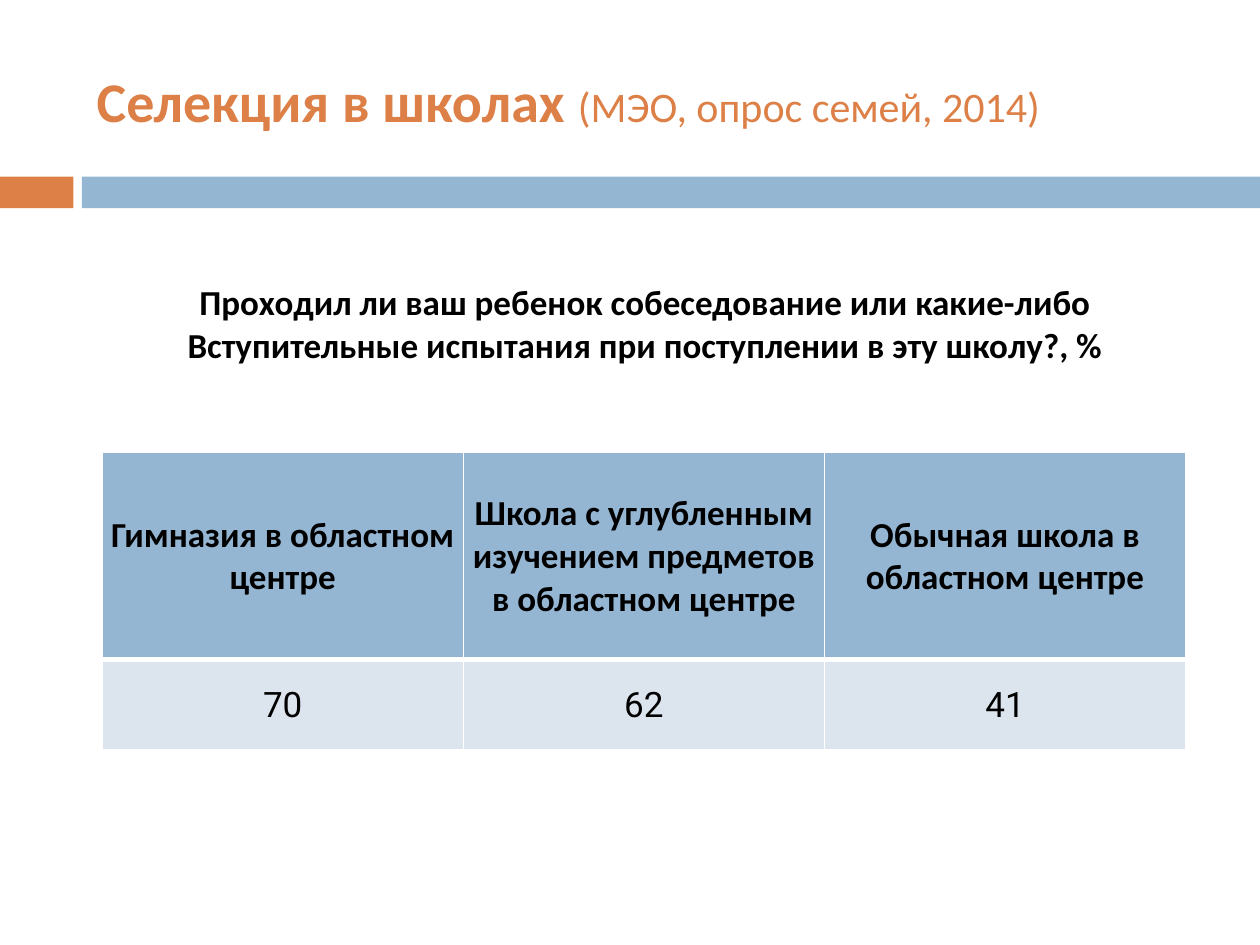
from lxml.etree import SubElement
from pptx import Presentation
from pptx.dml.color import RGBColor
from pptx.enum.shapes import MSO_SHAPE
from pptx.enum.text import MSO_ANCHOR, PP_ALIGN
from pptx.oxml.ns import qn
from pptx.util import Cm, Pt

ORANGE, BLUE, PALE, BLACK, WHITE = "DD8047", "94B6D2", "DCE5EE", "000000", "FFFFFF"
HEADING = {"name": "Calibri", "size": Pt(20), "bold": True, "color": BLACK}
VALUE = {**HEADING, "name": "Roboto", "bold": False}
TITLE = {**HEADING, "size": Pt(32), "color": ORANGE}
SUBTITLE = {**TITLE, "size": Pt(24), "bold": False}


def color(hex_value):
    return RGBColor.from_string(hex_value)


def paint(target, hex_value):
    target.fill.solid()
    target.fill.fore_color.rgb = color(hex_value)


class SlideBuilder:
    """Holds the table style and the slide being filled."""

    cell_format = {
        "vertical_anchor": MSO_ANCHOR.MIDDLE,
        "margin_left": Cm(0.03),
        "margin_right": Cm(0.03),
        "margin_top": Cm(0.03),
        "margin_bottom": Cm(0),
    }
    border_color = WHITE

    def __init__(self, deck):
        self.slide = deck.slides.add_slide(deck.slide_layouts[6])

    def bar(self, left, top, width, height, fill):
        bar = self.slide.shapes.add_shape(
            MSO_SHAPE.RECTANGLE, Cm(left), Cm(top), Cm(width), Cm(height))
        bar.shadow.inherit = False
        paint(bar, fill)
        bar.line.fill.background()

    def add_spans(self, para, spans, align):
        para.alignment = align
        for text, style in spans:
            span = para.add_run()
            span.text = text
            for key, value in style.items():
                if key == "color":
                    span.font.color.rgb = color(value)
                else:
                    setattr(span.font, key, value)

    def text(self, left, top, width, height, lines, align, anchor):
        box = self.slide.shapes.add_textbox(Cm(left), Cm(top), Cm(width), Cm(height))
        frame = box.text_frame
        frame.word_wrap = True
        frame.vertical_anchor = anchor
        for index, spans in enumerate(lines):
            para = frame.add_paragraph() if index else frame.paragraphs[0]
            self.add_spans(para, spans, align)

    def borders(self, cell, bottom):
        """Draw the four cell edges; widths are in points."""
        properties = cell._tc.get_or_add_tcPr()
        for side, width in {"L": 1, "R": 1, "T": 1, "B": bottom}.items():
            line = SubElement(properties, qn(f"a:ln{side}"), w=str(Pt(width)))
            fill = SubElement(line, qn("a:solidFill"))
            SubElement(fill, qn("a:srgbClr"), val=self.border_color)

    def table(self, left, top, column_width, rows):
        """Each row is (height, fill, text style, top border, bottom border, texts)."""
        count = len(rows[0][-1])
        height = sum(row[0] for row in rows)
        table = self.slide.shapes.add_table(
            len(rows), count, Cm(left), Cm(top),
            Cm(column_width * count), Cm(height)).table
        table.horz_banding = False
        for column in table.columns:
            column.width = Cm(column_width)
        for row, (row_height, fill, style, bottom, texts) in zip(table.rows, rows):
            row.height = Cm(row_height)
            for cell, text in zip(row.cells, texts):
                for key, value in self.cell_format.items():
                    setattr(cell, key, value)
                self.borders(cell, bottom)
                paint(cell, fill)
                self.add_spans(cell.text_frame.paragraphs[0], [(text, style)],
                               PP_ALIGN.CENTER)


def main():
    deck = Presentation()
    deck.slide_width, deck.slide_height = Cm(25.4), Cm(19.05)
    page = SlideBuilder(deck)

    page.bar(0, 3.56, 1.48, 0.64, ORANGE)
    page.bar(1.65, 3.56, 23.75, 0.64, BLUE)
    page.text(1.7, 0.64, 22.66, 2.74,
              [[("Селекция в школах ", TITLE), ("(МЭО, опрос семей, 2014)", SUBTITLE)]],
              PP_ALIGN.LEFT, MSO_ANCHOR.MIDDLE)
    page.table(2.06, 9.12, 7.28, [
        (4.17, BLUE, HEADING, 3, [
            "Гимназия в областном центре",
            "Школа с углубленным изучением предметов в областном центре",
            "Обычная школа в областном центре",
        ]),
        (1.83, PALE, VALUE, 1, ["70", "62", "41"]),
    ])
    page.text(2.11, 5.54, 21.79, 2.74,
              [[("Проходил ли ваш ребенок собеседование или какие-либо", HEADING)],
               [("Вступительные испытания при поступлении в эту школу?, %", HEADING)]],
              PP_ALIGN.CENTER, MSO_ANCHOR.TOP)

    deck.save("out.pptx")


if __name__ == "__main__":
    main()
